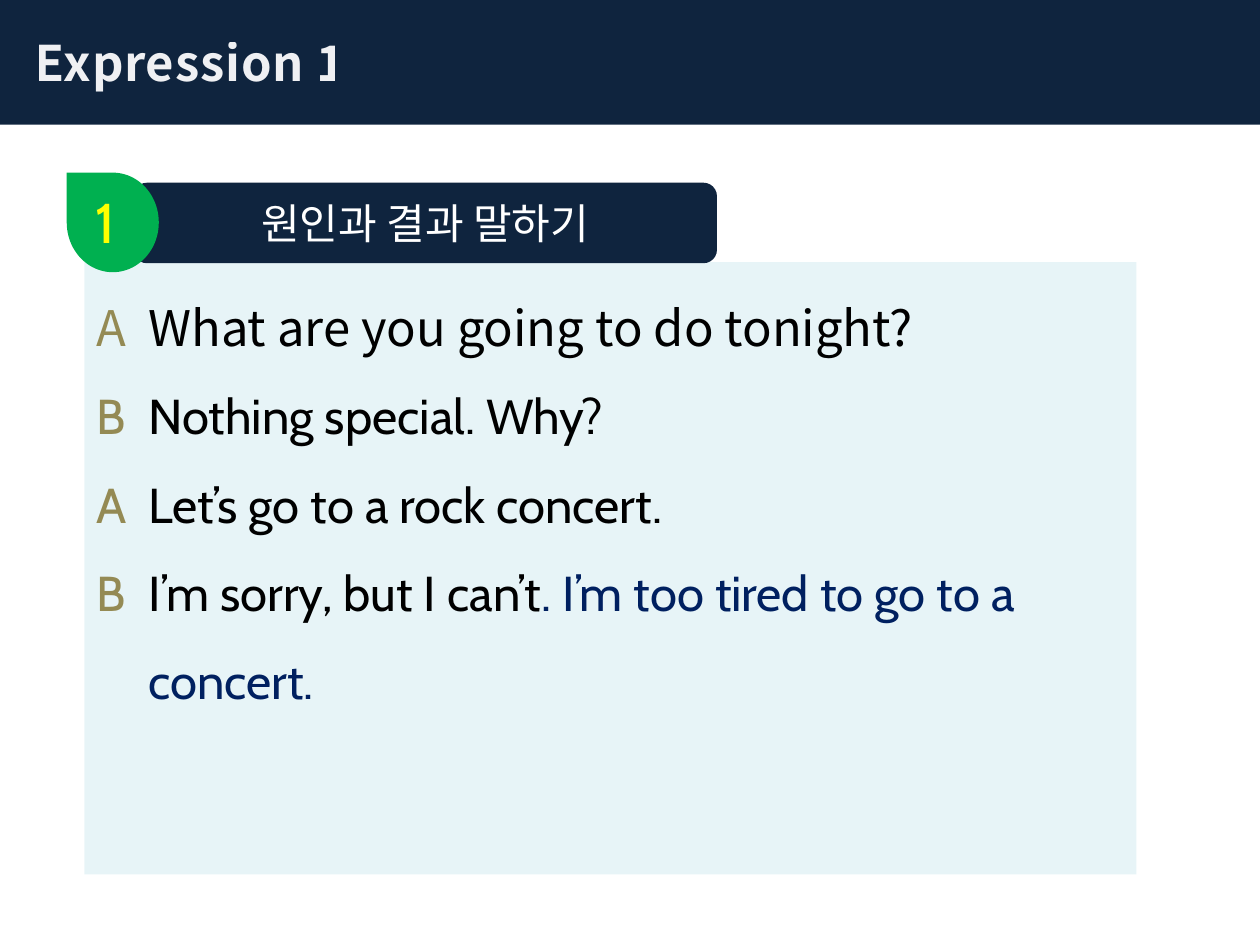
import dataclasses

import pptx
import pptx.dml.color
import pptx.enum.shapes
import pptx.enum.text
import pptx.oxml.ns
import pptx.util
from lxml import etree

Pt = pptx.util.Pt
SHAPES = pptx.enum.shapes.MSO_SHAPE
ALIGN = pptx.enum.text.PP_ALIGN
ANCHOR = pptx.enum.text.MSO_ANCHOR


@dataclasses.dataclass(frozen=True)
class Theme:
    navy: str = "0F243E"
    green: str = "00B050"
    panel: str = "B7DEE8"
    title: str = "FCFCFD"
    white: str = "FFFFFF"
    yellow: str = "FFFF00"
    speaker: str = "948A54"
    black: str = "000000"
    highlight: str = "002060"
    sans: str = "Noto Sans CJK KR"
    round: str = "Cabin"
    body_size: int = 28
    heading_size: int = 24
    number_size: int = 32


THEME = Theme()

# Each line: speaker, font, then (text, colour) parts.
DIALOGUE = [
    ("A", THEME.sans, [("What are you going to do tonight?", THEME.black)]),
    ("B", THEME.round, [("Nothing special. Why?", THEME.black)]),
    ("A", THEME.round, [("Let’s go to a rock concert.", THEME.black)]),
    ("B", THEME.round, [("I’m sorry, but I can’t", THEME.black),
                        (". I’m too tired to go to a concert.", THEME.highlight)]),
]


def set_color(fill, color, opacity=None):
    """Set a solid fill; opacity is in percent."""
    fill.solid()
    fill.fore_color.rgb = pptx.dml.color.RGBColor.from_string(color)
    if opacity is not None:
        value = fill._xPr.find(".//" + pptx.oxml.ns.qn("a:srgbClr"))
        etree.SubElement(value, pptx.oxml.ns.qn("a:alpha"), val=str(opacity * 1000))


def add_block(page, kind, left, top, width, height, color, opacity=None, rotation=0):
    block = page.shapes.add_shape(kind, Pt(left), Pt(top), Pt(width), Pt(height))
    block.shadow.inherit = False
    block.line.fill.background()
    block.rotation = rotation
    set_color(block.fill, color, opacity)
    return block


def add_text(para, text, *, size, font, color, bold=False, opacity=None, spacing=None):
    span = para.add_run()
    span.text = text
    span.font.size = Pt(size)
    span.font.bold = bold
    set_color(span.font.fill, color, opacity)
    span.font.name = font
    properties = span.font._element
    east_asian = etree.Element(pptx.oxml.ns.qn("a:ea"), typeface=font)
    properties.find(pptx.oxml.ns.qn("a:latin")).addnext(east_asian)
    if spacing is not None:
        properties.set("spc", str(int(spacing * 100)))


def add_label(box, text, align, **style):
    """Write one line of text in the middle of a box."""
    box.text_frame.vertical_anchor = ANCHOR.MIDDLE
    para = box.text_frame.paragraphs[0]
    para.alignment = align
    add_text(para, text, **style)


def add_dialogue(box, lines, hang=29.5):
    """Write the lines with the speakers hanging to the left of the words."""
    frame = box.text_frame
    frame.word_wrap = True
    frame.vertical_anchor = ANCHOR.TOP
    for index, (speaker, font, parts) in enumerate(lines):
        para = frame.add_paragraph() if index else frame.paragraphs[0]
        para.alignment = ALIGN.LEFT
        para.line_spacing = 1.5
        properties = para._p.get_or_add_pPr()
        properties.set("marL", str(Pt(hang)))
        properties.set("indent", str(-Pt(hang)))
        for text, color in [(speaker + "\t", THEME.speaker)] + parts:
            add_text(para, text, size=THEME.body_size, font=font, color=color)


def add_number(page, text):
    box = page.shapes.add_textbox(Pt(47.5), Pt(103.7), Pt(33.8), Pt(46))
    box.text_frame.word_wrap = True
    add_text(box.text_frame.paragraphs[0], text, size=THEME.number_size,
             font=THEME.round, color=THEME.yellow)


def main():
    deck = pptx.Presentation()
    deck.slide_width, deck.slide_height = Pt(720), Pt(540)
    page = deck.slides.add_slide(deck.slide_layouts[6])

    panel = add_block(page, SHAPES.RECTANGLE, 48.2, 149.8, 601.2, 349.9,
                      THEME.panel, opacity=32)
    add_dialogue(panel, DIALOGUE)

    banner = add_block(page, SHAPES.RECTANGLE, 0, 0, 720, 71.3, THEME.navy)
    banner.text_frame.margin_left = Pt(20)
    add_label(banner, "Expression 1", ALIGN.LEFT, size=THEME.body_size, font=THEME.sans,
              color=THEME.title, bold=True, opacity=95, spacing=0.5)

    heading = add_block(page, SHAPES.FLOWCHART_ALTERNATE_PROCESS,
                        76.3, 104.4, 333.4, 46, THEME.navy)
    add_label(heading, "원인과 결과 말하기", ALIGN.CENTER, size=THEME.heading_size,
              font=THEME.sans, color=THEME.white)

    add_block(page, SHAPES.TEAR, 36, 100.8, 56.9, 52.6, THEME.green, rotation=270)
    add_number(page, "1")
    deck.save("out.pptx")


if __name__ == "__main__":
    main()
